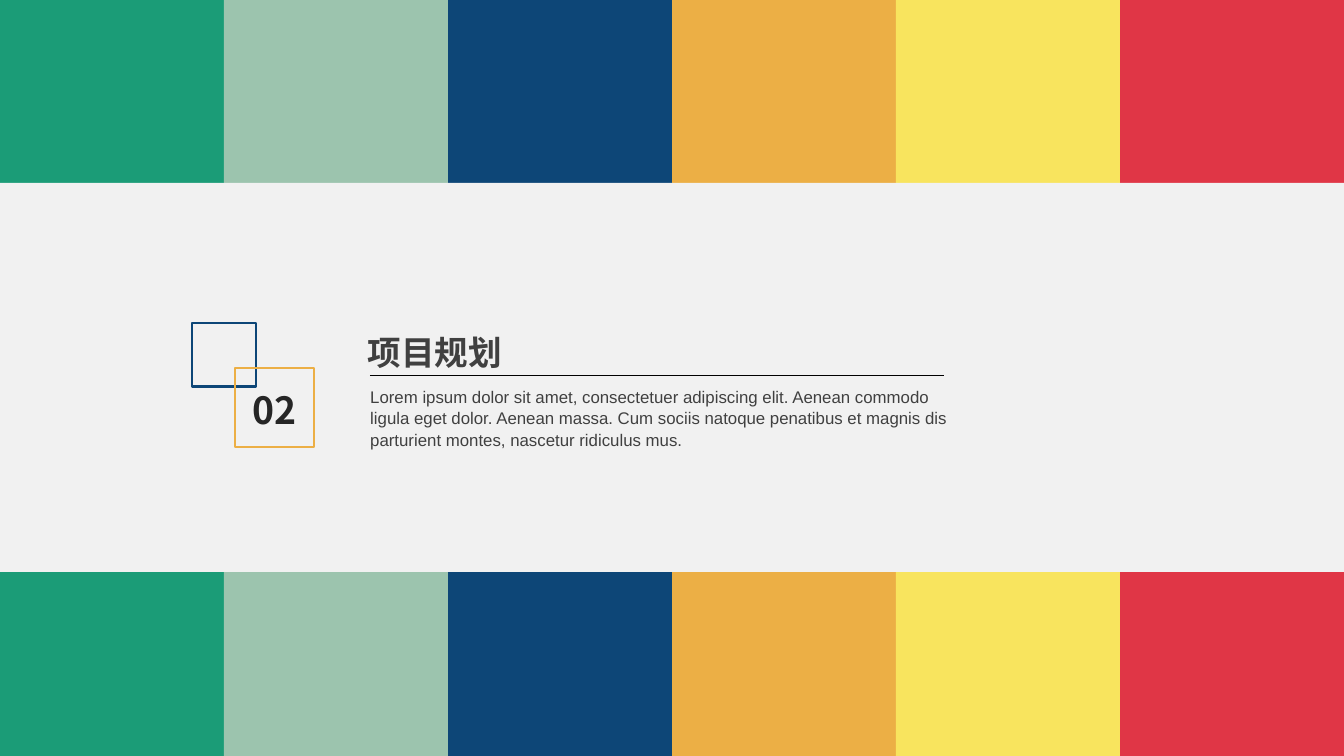
from lxml.etree import SubElement
from pptx import Presentation
from pptx.dml.color import RGBColor
from pptx.enum.shapes import MSO_CONNECTOR, MSO_SHAPE
from pptx.enum.text import MSO_ANCHOR, PP_ALIGN
from pptx.oxml.ns import qn
from pptx.util import Pt

EMU_PER_PX = 914400 / 134.4
WIDTH, HEIGHT = 1344, 756
CJK, LATIN = "Noto Sans CJK SC", "Arial"
NAVY, ORANGE, PALE = "0D4677", "ECAF45", "F1F1F1"

STRIPES = ["1B9C77", "9CC4AE", NAVY, ORANGE, "F8E45E", "E03646"]
BAND = (-4, 183, 1348, 389)
SQUARES = [((192, 323, 64, 64), NAVY), ((235, 368, 79, 79), ORANGE)]
RULE = (370, 944, 376)

TITLE = "项目规划"
NUMBER = "02"
BODY = (
    "Lorem ipsum dolor sit amet, consectetuer adipiscing elit. Aenean commodo "
    "ligula eget dolor. Aenean massa. Cum sociis natoque penatibus et magnis dis "
    "parturient montes, nascetur ridiculus mus."
)


def px(n):
    return round(n * EMU_PER_PX)


def rgb(color):
    return RGBColor.from_string(color)


def add_rect(box, fill=None, line=None):
    sp = slide.shapes.add_shape(MSO_SHAPE.RECTANGLE, *map(px, box))
    sp.shadow.inherit = False
    if fill:
        sp.fill.solid()
        sp.fill.fore_color.rgb = rgb(fill)
    else:
        sp.fill.background()
    if line:
        sp.line.color.rgb = rgb(line)
        sp.line.width = Pt(1.5)
    else:
        sp.line.fill.background()


def set_text(sp, text, size, font, color, bold=False, wrap=False,
             anchor=MSO_ANCHOR.MIDDLE, align=PP_ALIGN.LEFT, spacing=1.0):
    tf = sp.text_frame
    tf.text = text
    tf.word_wrap = wrap
    tf.vertical_anchor = anchor
    p = tf.paragraphs[0]
    p.alignment = align
    p.line_spacing = spacing
    r = p.runs[0]
    r.font.size, r.font.name, r.font.bold = Pt(size), font, bold
    r.font.color.rgb = rgb(color)
    SubElement(r.font._element, qn("a:ea"), typeface=font)


prs = Presentation()
prs.slide_width, prs.slide_height = px(WIDTH), px(HEIGHT)
slide = prs.slides.add_slide(prs.slide_layouts[5])
slide.background.fill.solid()
slide.background.fill.fore_color.rgb = rgb(PALE)

stripe_width = WIDTH // len(STRIPES)
for i, color in enumerate(STRIPES):
    add_rect((i * stripe_width, 0, stripe_width, HEIGHT), fill=color)
add_rect(BAND, fill=PALE)

number = slide.shapes.add_textbox(*map(px, (238, 380, 73, 60)))
set_text(number, NUMBER, 20, CJK, "262626", bold=True, align=PP_ALIGN.CENTER)

title = slide.shapes.title
title.left, title.top, title.width, title.height = map(px, (354, 325, 164, 54))
set_text(title, TITLE, 18, CJK, "404040", bold=True)
slide.shapes._spTree.append(title._element)  # bring in front of the band

body = slide.shapes.add_textbox(*map(px, (357, 379, 622, 75)))
set_text(body, BODY, 9, LATIN, "404040", wrap=True,
         anchor=MSO_ANCHOR.TOP, spacing=1.06)

x1, x2, y = map(px, RULE)
rule = slide.shapes.add_connector(MSO_CONNECTOR.STRAIGHT, x1, y, x2, y)
rule.line.color.rgb = rgb("000000")
rule.line.width = Pt(0.5)
SubElement(rule._element.spPr, qn("a:effectLst"))

for box, color in SQUARES:
    add_rect(box, line=color)

prs.save("out.pptx")
